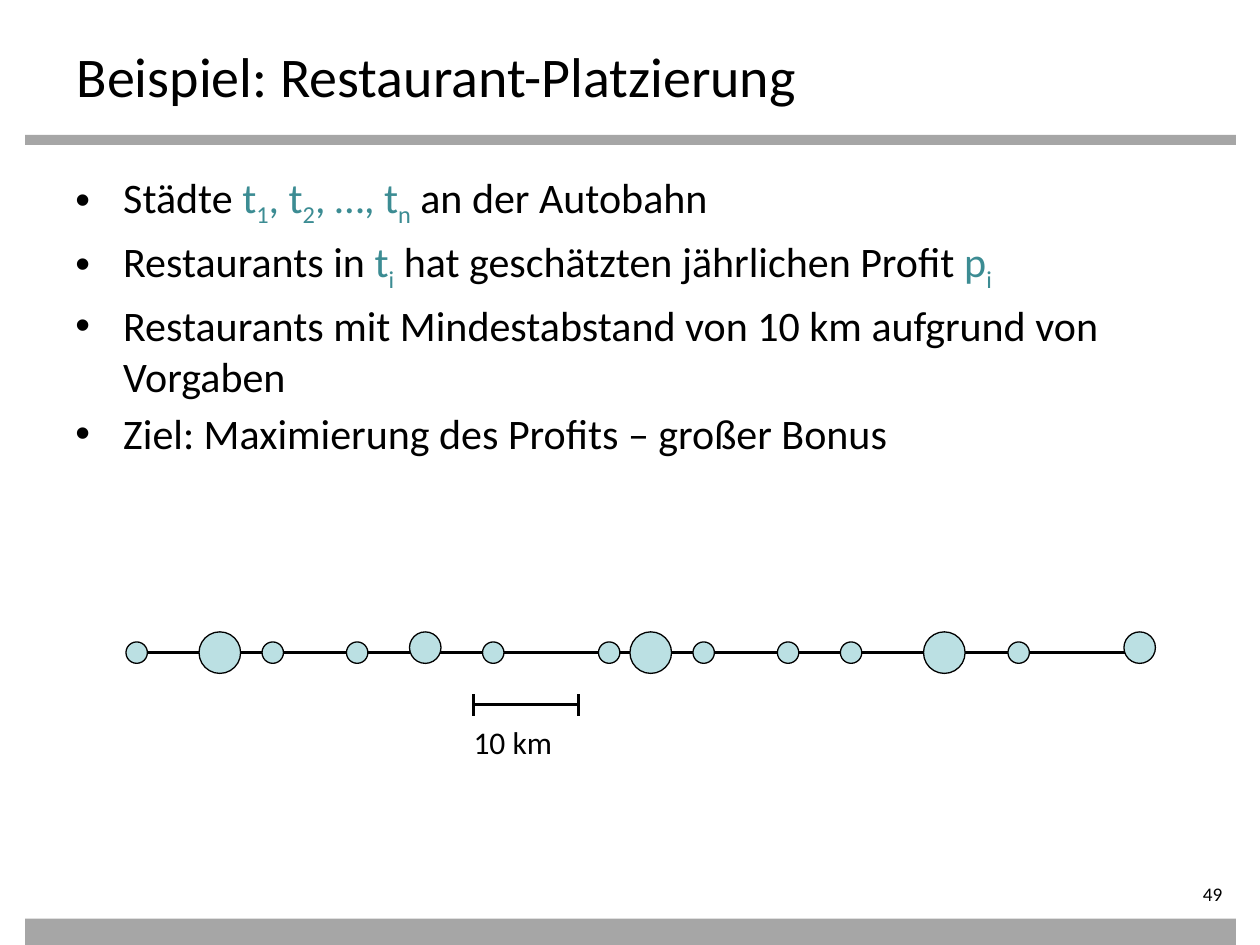
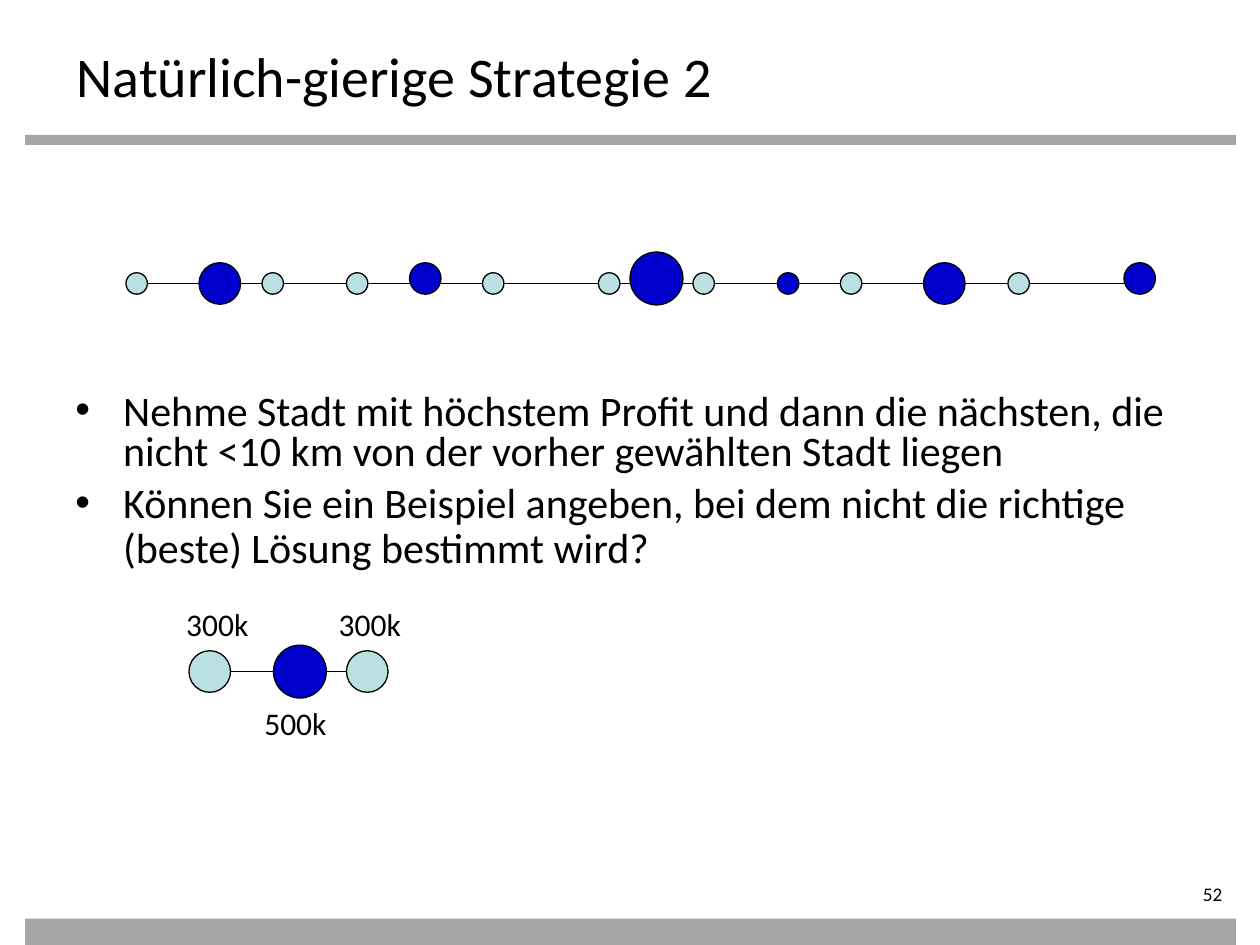
from dataclasses import dataclass, replace

from lxml import etree
from pptx import Presentation
from pptx.dml.color import RGBColor
from pptx.enum import shapes, text
from pptx.oxml import ns
from pptx.util import Inches, Pt

COLORS = {
    "text": "000000",
    "band": "A6A6A6",
    "formula": "3C8C93",
    "city": "BBE0E3",
    "chosen": "0000CC",
}
FONT = "Calibri"
SMALL, MEDIUM, LARGE, HUGE = 0.17, 0.25, 0.33, 0.42


@dataclass(frozen=True)
class City:
    left: float
    diameter: float = SMALL
    lift: float = 0  # distance of the centre above the road
    chosen: bool = False


@dataclass(frozen=True)
class Span:
    text: str
    formula: bool = False
    subscript: bool = False


@dataclass(frozen=True)
class Bullet:
    spans: list[Span]
    line_spacing: float = 1.0


@dataclass(frozen=True)
class Label:
    text: str
    left: float
    top: float
    width: float


HIGHWAY = [
    City(1), City(1.58, LARGE, chosen=True), City(2.08), City(2.75),
    City(3.25, MEDIUM, 0.04, True), City(3.83), City(4.75),
    City(5, HUGE, 0.04, True), City(5.5), City(6.17, chosen=True), City(6.67),
    City(7.33, LARGE, chosen=True), City(8), City(8.92, MEDIUM, 0.04, True),
]
COUNTEREXAMPLE = [City(1.5, LARGE), City(2.17, HUGE, chosen=True), City(2.75, LARGE)]
PROFITS = [
    Label("300k", 1.38, 4.75, 0.74),
    Label("300k", 2.59, 4.75, 0.74),
    Label("500k", 2, 5.54, 0.74),
]


def color(name: str) -> RGBColor:
    return RGBColor.from_string(COLORS[name])


def style(paragraph, size: float) -> None:
    paragraph.font.name = FONT
    paragraph.font.size = Pt(size)
    paragraph.font.color.rgb = color("text")


def add_frame(slide, left: float, top: float, width: float, height: float, wrap: bool = True):
    box = slide.shapes.add_textbox(Inches(left), Inches(top), Inches(width), Inches(height))
    frame = box.text_frame
    frame.word_wrap = wrap
    frame.vertical_anchor = text.MSO_ANCHOR.TOP
    return frame


def add_label(slide, label: Label) -> None:
    frame = add_frame(slide, label.left, label.top, label.width, 0.4, wrap=False)
    frame.auto_size = text.MSO_AUTO_SIZE.SHAPE_TO_FIT_TEXT
    frame.text = label.text
    style(frame.paragraphs[0], 18)


def add_filled(slide, kind, left: float, top: float, width: float, height: float, fill: str):
    shape = slide.shapes.add_shape(
        kind, Inches(left), Inches(top), Inches(width), Inches(height))
    shape.shadow.inherit = False
    shape.fill.solid()
    shape.fill.fore_color.rgb = color(fill)
    return shape


def add_line(slide, x1: float, y1: float, x2: float, y2: float, weight: float) -> None:
    line = slide.shapes.add_connector(
        shapes.MSO_CONNECTOR.STRAIGHT, Inches(x1), Inches(y1), Inches(x2), Inches(y2))
    line.line.color.rgb = color("text")
    line.line.width = Pt(weight)
    etree.SubElement(line._element.spPr, ns.qn("a:effectLst"))


def add_base_slide(presentation, title: str, number: int):
    """Add a slide with the two bands, the title and the slide number."""
    slide = presentation.slides.add_slide(presentation.slide_layouts[6])
    for top, height in ((1.07, 0.08), (7.29, 0.21)):
        band = add_filled(slide, shapes.MSO_SHAPE.RECTANGLE, 0.2, top, 9.61, height, "band")
        band.line.fill.background()

    frame = add_frame(slide, 0.51, 0.28, 9, 0.55)
    frame.text = title
    style(frame.paragraphs[0], 32)

    frame = add_frame(slide, 8.7, 7, 1.1, 0.22)
    frame.margin_left = frame.margin_top = frame.margin_bottom = 0
    frame.text = str(number)
    frame.paragraphs[0].alignment = text.PP_ALIGN.RIGHT
    style(frame.paragraphs[0], 11)
    return slide


def add_bullets(slide, top: float, height: float, bullets: list[Bullet]) -> None:
    frame = add_frame(slide, 0.5, top, 9, height)
    for index, bullet in enumerate(bullets):
        paragraph = frame.add_paragraph() if index else frame.paragraphs[0]
        paragraph.line_spacing = bullet.line_spacing
        paragraph.space_before = Pt(4 if index else 0)
        properties = paragraph._p.get_or_add_pPr()
        properties.set("marL", str(Inches(0.38)))
        properties.set("indent", str(-Inches(0.38)))
        etree.SubElement(properties, ns.qn("a:buFont"), typeface="Arial")
        etree.SubElement(properties, ns.qn("a:buChar"), char="•")
        style(paragraph, 24)
        for span in bullet.spans:
            run = paragraph.add_run()
            run.text = span.text
            if span.formula:
                run.font.color.rgb = color("formula")
            if span.subscript:
                run.font._element.set("baseline", "-25000")


def indexed(name: str, index: str) -> list[Span]:
    """Return a formula symbol with its subscript."""
    return [Span(name, formula=True), Span(index, formula=True, subscript=True)]


def add_road(slide, cities: list[City], start: float, end: float, y: float,
             weight: float) -> None:
    add_line(slide, start, y, end, y, weight)
    for city in cities:
        circle = add_filled(
            slide, shapes.MSO_SHAPE.OVAL, city.left, y - city.lift - city.diameter / 2,
            city.diameter, city.diameter, "chosen" if city.chosen else "city")
        circle.line.color.rgb = color("text")
        circle.line.width = Pt(0.75)


def add_scale(slide, left: float, right: float, y: float) -> None:
    add_line(slide, left, y, right, y, 1.5)
    for x in (left, right):
        add_line(slide, x, y - 0.08, x, y + 0.09, 1.5)
    add_label(slide, Label("10 km", left - 0.1, y + 0.1, 0.85))


def build_placement_slide(presentation) -> None:
    slide = add_base_slide(presentation, "Beispiel: Restaurant-Platzierung", 49)
    add_bullets(slide, 1.31, 5.43, [
        Bullet([Span("Städte "), *indexed("t", "1"), *indexed(", t", "2"),
                *indexed(", …, t", "n"), Span(" an der Autobahn")]),
        Bullet([Span("Restaurants in "), *indexed("t", "i"),
                Span(" hat geschätzten jährlichen Profit "), *indexed("p", "i")]),
        Bullet([Span("Restaurants mit Mindestabstand von 10 km aufgrund von Vorgaben")]),
        Bullet([Span("Ziel: Maximierung des Profits – großer Bonus")]),
    ])
    cities = [replace(city, chosen=False) for city in HIGHWAY]
    cities = [replace(city, diameter=LARGE, lift=0) if city.diameter == HUGE else city
              for city in cities]
    add_road(slide, cities, 1, 9.08, 5.18, 1.5)
    add_scale(slide, 3.76, 4.59, 5.59)


def build_greedy_slide(presentation) -> None:
    slide = add_base_slide(presentation, "Natürlich-gierige Strategie 2", 52)
    add_road(slide, HIGHWAY, 1, 9.08, 2.25, 0.75)
    add_bullets(slide, 3.08, 1.5, [
        Bullet([Span("Nehme Stadt mit höchstem Profit und dann die nächsten, die "
                     "nicht <10 km von der vorher gewählten Stadt liegen")], 0.8),
        Bullet([Span("Können Sie ein Beispiel angeben, bei dem nicht die richtige "
                     "(beste) Lösung bestimmt wird?")], 0.9),
    ])
    add_road(slide, COUNTEREXAMPLE, 1.75, 2.83, 5.33, 0.75)
    for profit in PROFITS:
        add_label(slide, profit)


def main() -> None:
    presentation = Presentation()
    presentation.slide_width = Inches(10)
    presentation.slide_height = Inches(7.5)
    build_placement_slide(presentation)
    build_greedy_slide(presentation)
    presentation.save("out.pptx")


if __name__ == "__main__":
    main()
